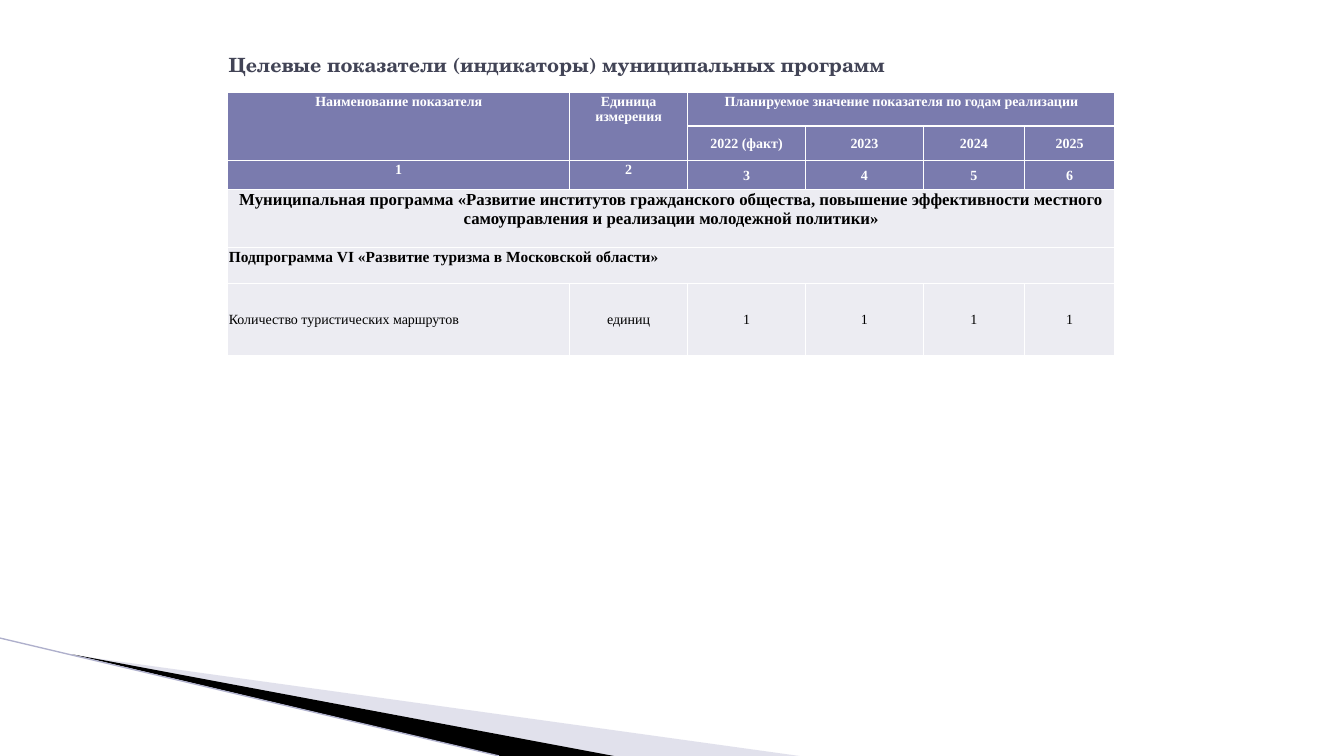
from lxml import etree
from pptx import Presentation
from pptx import util as u
from pptx.dml.color import RGBColor
from pptx.enum import shapes, text
from pptx.oxml import ns

WHITE = RGBColor(0xFF, 0xFF, 0xFF)
BLACK = RGBColor(0, 0, 0)
SLATE = RGBColor(0x42, 0x44, 0x56)
HEADER = RGBColor(0x7A, 0x7B, 0xAE)
BODY = RGBColor(0xEC, 0xEC, 0xF2)
LAVENDER = RGBColor(0xB6, 0xB6, 0xD1)
EDGE = RGBColor(0xAF, 0xB0, 0xCC)

CENTER, LEFT = text.PP_ALIGN.CENTER, text.PP_ALIGN.LEFT
TOP, MIDDLE = text.MSO_ANCHOR.TOP, text.MSO_ANCHOR.MIDDLE

COLUMNS = [3.39, 1.17, 1.17, 1.17, 1, 0.9]
ROWS = [0.33, 0.32, 0.29, 0.57, 0.36, 0.71]
MERGES = [(0, 0, 1, 0), (0, 1, 1, 1), (0, 2, 0, 5), (3, 0, 3, 5), (4, 0, 4, 5)]
HEADER_ROWS = 3
INDICATORS = [
    ["Наименование показателя", "Единица измерения",
     "Планируемое значение показателя по годам реализации", "", "", ""],
    ["", "", "2022 (факт)", "2023", "2024", "2025"],
    ["1", "2", "3", "4", "5", "6"],
    ["Муниципальная программа «Развитие институтов гражданского общества, "
     "повышение эффективности местного самоуправления и реализации "
     "молодежной политики»", "", "", "", "", ""],
    ["Подпрограмма VI «Развитие туризма в Московской области»", "", "", "", "", ""],
    ["Количество туристических маршрутов", "единиц", "1", "1", "1", "1"],
]
SIZES = [10, 10, 10, 12, 11, 10]


class SlideBuilder:
    title_font = "TeX Gyre Schola"
    table_font = "Times New Roman"

    def __init__(self, slide):
        self.slide = slide

    def add_words(self, paragraph, words, font, size, color, bold):
        run = paragraph.add_run()
        run.text = words
        run.font.name = font
        run.font.size = u.Pt(size)
        run.font.color.rgb = color
        run.font.bold = bold

    def wedge(self, points, color, alpha=None):
        corners = [(u.Inches(x), u.Inches(y)) for x, y in points]
        builder = self.slide.shapes.build_freeform(*corners[0])
        builder.add_line_segments(corners[1:])
        shape = builder.convert_to_shape()
        shape.shadow.inherit = False
        shape.fill.solid()
        shape.fill.fore_color.rgb = color
        shape.line.fill.background()
        if alpha is not None:
            element = shape._element.spPr.find(
                f"{ns.qn('a:solidFill')}/{ns.qn('a:srgbClr')}")
            etree.SubElement(element, ns.qn("a:alpha"), val=str(alpha * 1000))

    def line(self, start, end, color, width):
        connector = self.slide.shapes.add_connector(
            shapes.MSO_CONNECTOR.STRAIGHT,
            *[u.Inches(value) for value in start + end])
        connector.line.color.rgb = color
        connector.line.width = u.Pt(width)
        etree.SubElement(connector._element.spPr, ns.qn("a:effectLst"))

    def title(self, words, left, top, width, height):
        box = self.slide.shapes.add_textbox(
            *[u.Inches(value) for value in (left, top, width, height)])
        frame = box.text_frame
        frame.word_wrap = True
        frame.vertical_anchor = MIDDLE
        self.add_words(frame.paragraphs[0], words, self.title_font, 14, SLATE, True)

    def borders(self, cell):
        properties = cell._tc.get_or_add_tcPr()
        for position, side in enumerate(("lnL", "lnR", "lnT", "lnB")):
            border = etree.Element(ns.qn(f"a:{side}"), w=str(int(u.Pt(1))))
            fill = etree.SubElement(border, ns.qn("a:solidFill"))
            etree.SubElement(fill, ns.qn("a:srgbClr"), val=str(WHITE))
            properties.insert(position, border)

    def cell(self, cell, words, size, color, bold, fill, align, anchor, inset):
        cell.fill.solid()
        cell.fill.fore_color.rgb = fill
        self.borders(cell)
        cell.margin_left = cell.margin_right = cell.margin_top = u.Inches(inset)
        cell.margin_bottom = 0
        cell.vertical_anchor = anchor
        if words:
            paragraph = cell.text_frame.paragraphs[0]
            paragraph.alignment = align
            self.add_words(paragraph, words, self.table_font, size, color, bold)

    def table(self, left, top):
        table = self.slide.shapes.add_table(
            len(ROWS), len(COLUMNS), u.Inches(left), u.Inches(top),
            u.Inches(sum(COLUMNS)), u.Inches(sum(ROWS))).table
        for column, width in zip(table.columns, COLUMNS):
            column.width = u.Inches(width)
        for row, height in zip(table.rows, ROWS):
            row.height = u.Inches(height)
        for top_row, first, bottom_row, last in MERGES:
            table.cell(top_row, first).merge(table.cell(bottom_row, last))
        last_row = len(ROWS) - 1
        for row, labels in enumerate(INDICATORS):
            header = row < HEADER_ROWS
            for column, words in enumerate(labels):
                year = column >= 2
                middle = row == last_row or (row in (1, 2) and year)
                self.cell(
                    table.cell(row, column), words, SIZES[row],
                    WHITE if header else BLACK, row != last_row,
                    HEADER if header else BODY,
                    LEFT if row >= 4 and column == 0 else CENTER,
                    MIDDLE if middle else TOP,
                    0 if row == last_row and year else 0.01)


def main():
    presentation = Presentation()
    presentation.slide_width = u.Inches(13.33)
    presentation.slide_height = u.Inches(7.5)
    slide = SlideBuilder(presentation.slides.add_slide(presentation.slide_layouts[6]))
    slide.wedge([(0.73, 6.5), (7.93, 7.5), (6.08, 7.5)], LAVENDER, 40)
    slide.wedge([(0.71, 6.49), (6.09, 7.5), (4.96, 7.5)], BLACK)
    slide.line((0, 6.33), (4.95, 7.5), EDGE, 0.95)
    slide.title("Целевые показатели (индикаторы) муниципальных программ",
                2.17, 0.3, 9, 0.69)
    slide.table(2.26, 0.92)
    presentation.save("out.pptx")


if __name__ == "__main__":
    main()
